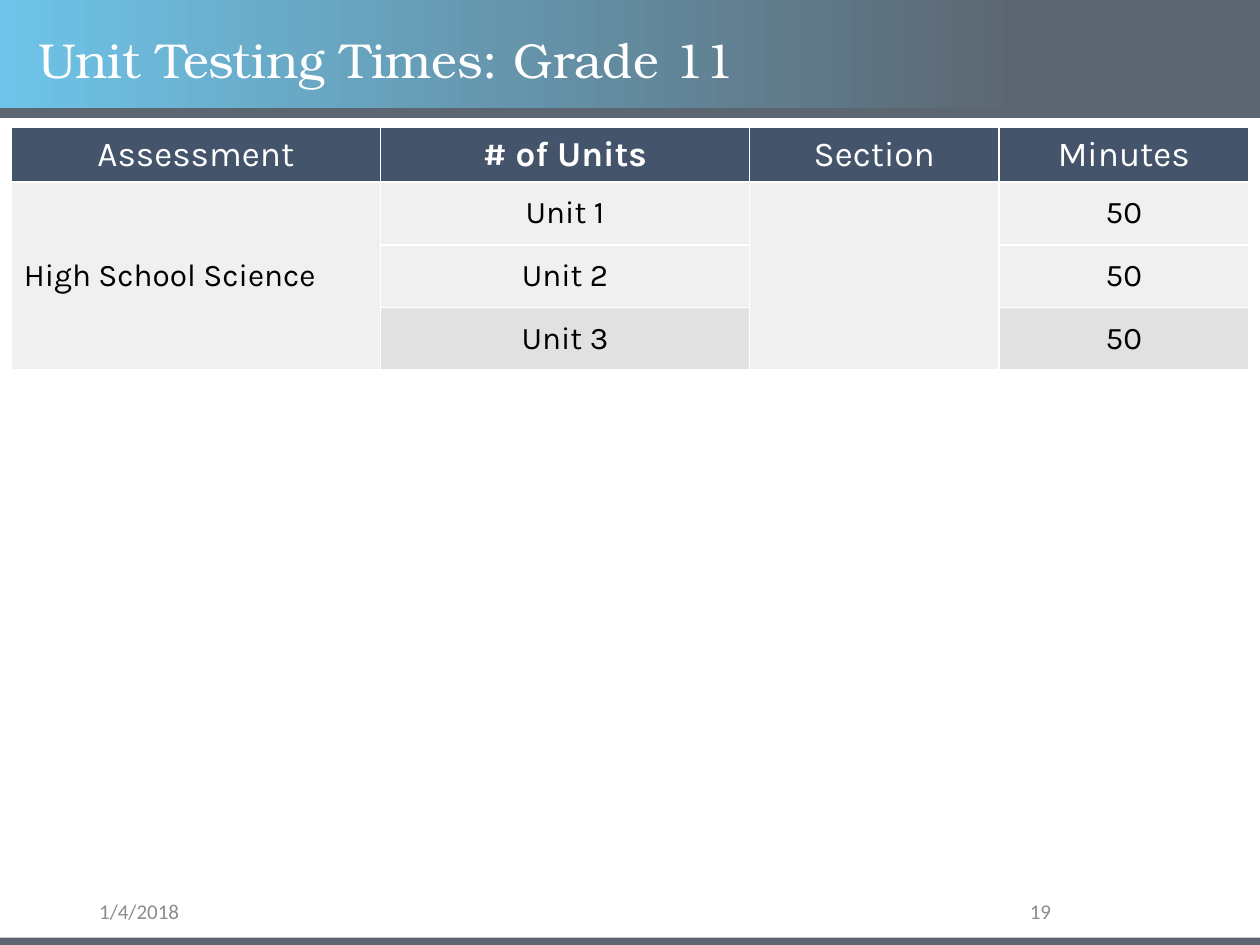
from dataclasses import dataclass
from typing import Optional

from lxml.etree import SubElement
from pptx import Presentation
from pptx.dml.color import RGBColor
from pptx.enum.shapes import MSO_SHAPE
from pptx.enum.text import MSO_ANCHOR, PP_ALIGN
from pptx.oxml.ns import qn
from pptx.util import Cm, Pt


@dataclass(frozen=True)
class Theme:
    sky: str = "6EC4E8"
    slate: str = "5C6670"
    header: str = "44546A"
    light_row: str = "F0F0F0"
    dark_row: str = "E1E1E1"
    white: str = "FFFFFF"
    black: str = "000000"
    muted: str = "8C8C8C"
    title_font: str = "TeX Gyre Bonum"
    table_font: str = "Karla"
    footer_font: str = "Calibri"
    title_size: int = 28
    header_size: int = 20
    body_size: int = 18
    footer_size: int = 12


@dataclass(frozen=True)
class Area:
    """A place on the slide, in centimetres."""
    left: float
    top: float
    width: float
    height: float

    def lengths(self) -> tuple:
        return Cm(self.left), Cm(self.top), Cm(self.width), Cm(self.height)


@dataclass(frozen=True)
class Unit:
    name: str
    minutes: str
    fill: str


THEME = Theme()
SLIDE_WIDTH, SLIDE_HEIGHT = 25.4, 19.05
TITLE_BAND = Area(0, 0, SLIDE_WIDTH, 2.2)
RULES = (Area(0, 2.18, SLIDE_WIDTH, 0.2), Area(0, 18.9, SLIDE_WIDTH, 0.15))
TITLE_AREA = Area(0.53, 0.53, 23.16, 1.45)
DATE_AREA = Area(1.75, 18.08, 5.72, 0.58)
NUMBER_AREA = Area(17.93, 18.08, 3.51, 0.58)

COLUMN_WIDTHS = (7.44, 7.44, 5.03, 5.03)
HEADER_HEIGHT, UNIT_HEIGHT = 1.06, 1.25
HEADINGS = ("Assessment", "# of Units", "Section", "Minutes")
BOLD_HEADING = "# of Units"
UNITS = (
    Unit("Unit 1", "50", THEME.light_row),
    Unit("Unit 2", "50", THEME.light_row),
    Unit("Unit 3", "50", THEME.dark_row),
)


def color(value: str) -> RGBColor:
    return RGBColor.from_string(value)


def write(frame, text: str, *, font: str, size: int, ink: str, bold: bool = False,
          align: PP_ALIGN = PP_ALIGN.LEFT, spacing: Optional[float] = None) -> None:
    para = frame.paragraphs[0]
    para.alignment = align
    if spacing:
        para.line_spacing = spacing
    span = para.add_run()
    span.text = text
    span.font.name = font
    span.font.size = Pt(size)
    span.font.bold = bold
    span.font.color.rgb = color(ink)


def add_band(page, area: Area, start: str, end: Optional[str] = None) -> None:
    """Draw a plain bar, or one fading from start to end."""
    band = page.shapes.add_shape(MSO_SHAPE.RECTANGLE, *area.lengths())
    band.shadow.inherit = False
    band.line.fill.background()
    if end is None:
        band.fill.solid()
        band.fill.fore_color.rgb = color(start)
        return
    band.fill.gradient()
    band.fill.gradient_angle = 0
    for stop, position, value in zip(band.fill.gradient_stops, (0, 0.81), (start, end)):
        stop.position = position
        stop.color.rgb = color(value)


def add_footer(page, area: Area, text: str, align: PP_ALIGN) -> None:
    box = page.shapes.add_textbox(*area.lengths())
    box.text_frame.word_wrap = True
    box.text_frame.vertical_anchor = MSO_ANCHOR.MIDDLE
    write(box.text_frame, text, font=THEME.footer_font, size=THEME.footer_size,
          ink=THEME.muted, align=align)


def place_title(page, text: str) -> None:
    title = page.shapes.title
    title.left, title.top, title.width, title.height = TITLE_AREA.lengths()
    title.text_frame.vertical_anchor = MSO_ANCHOR.MIDDLE
    write(title.text_frame, text, font=THEME.title_font, size=THEME.title_size,
          ink=THEME.white, spacing=0.9)
    page.shapes._spTree.append(title._element)  # in front of the band


def style_cell(cell, fill: str, margin: Optional[float] = None) -> None:
    properties = cell._tc.get_or_add_tcPr()
    for side in ("a:lnL", "a:lnR", "a:lnT", "a:lnB"):
        line = SubElement(properties, qn(side), w=str(Pt(1)))
        SubElement(SubElement(line, qn("a:solidFill")), qn("a:srgbClr"), val=THEME.white)
    cell.fill.solid()
    cell.fill.fore_color.rgb = color(fill)
    cell.vertical_anchor = MSO_ANCHOR.MIDDLE
    if margin is not None:
        cell.margin_left = cell.margin_right = Cm(margin)
        cell.margin_top = cell.margin_bottom = Cm(margin)


def add_times_table(page) -> None:
    area = Area(0.23, 2.57, sum(COLUMN_WIDTHS), HEADER_HEIGHT + len(UNITS) * UNIT_HEIGHT)
    table = page.shapes.add_table(len(UNITS) + 1, len(HEADINGS), *area.lengths()).table
    for column, width in zip(table.columns, COLUMN_WIDTHS):
        column.width = Cm(width)
    for index, row in enumerate(table.rows):
        row.height = Cm(UNIT_HEIGHT if index else HEADER_HEIGHT)

    for index, heading in enumerate(HEADINGS):
        cell = table.cell(0, index)
        style_cell(cell, THEME.header)
        write(cell.text_frame, heading, font=THEME.table_font, size=THEME.header_size,
              ink=THEME.white, bold=heading == BOLD_HEADING, align=PP_ALIGN.CENTER)

    body = dict(font=THEME.table_font, size=THEME.body_size, ink=THEME.black)
    for number, unit in enumerate(UNITS, start=1):
        for index, text in enumerate(("", unit.name, "", unit.minutes)):
            cell = table.cell(number, index)
            style_cell(cell, unit.fill if text else THEME.light_row, margin=0.25)
            if text:
                write(cell.text_frame, text, align=PP_ALIGN.CENTER, **body)
    for index in (0, 2):
        table.cell(1, index).merge(table.cell(len(UNITS), index))
    write(table.cell(1, 0).text_frame, "High School Science", **body)


def main() -> None:
    deck = Presentation()
    deck.slide_width, deck.slide_height = Cm(SLIDE_WIDTH), Cm(SLIDE_HEIGHT)
    page = deck.slides.add_slide(deck.slide_layouts.get_by_name("Title Only"))
    add_footer(page, DATE_AREA, "1/4/2018", PP_ALIGN.LEFT)
    add_band(page, TITLE_BAND, THEME.sky, THEME.slate)
    for rule in RULES:
        add_band(page, rule, THEME.slate)
    add_footer(page, NUMBER_AREA, "19", PP_ALIGN.RIGHT)
    add_times_table(page)
    place_title(page, "Unit Testing Times: Grade 11")
    deck.save("out.pptx")


if __name__ == "__main__":
    main()
